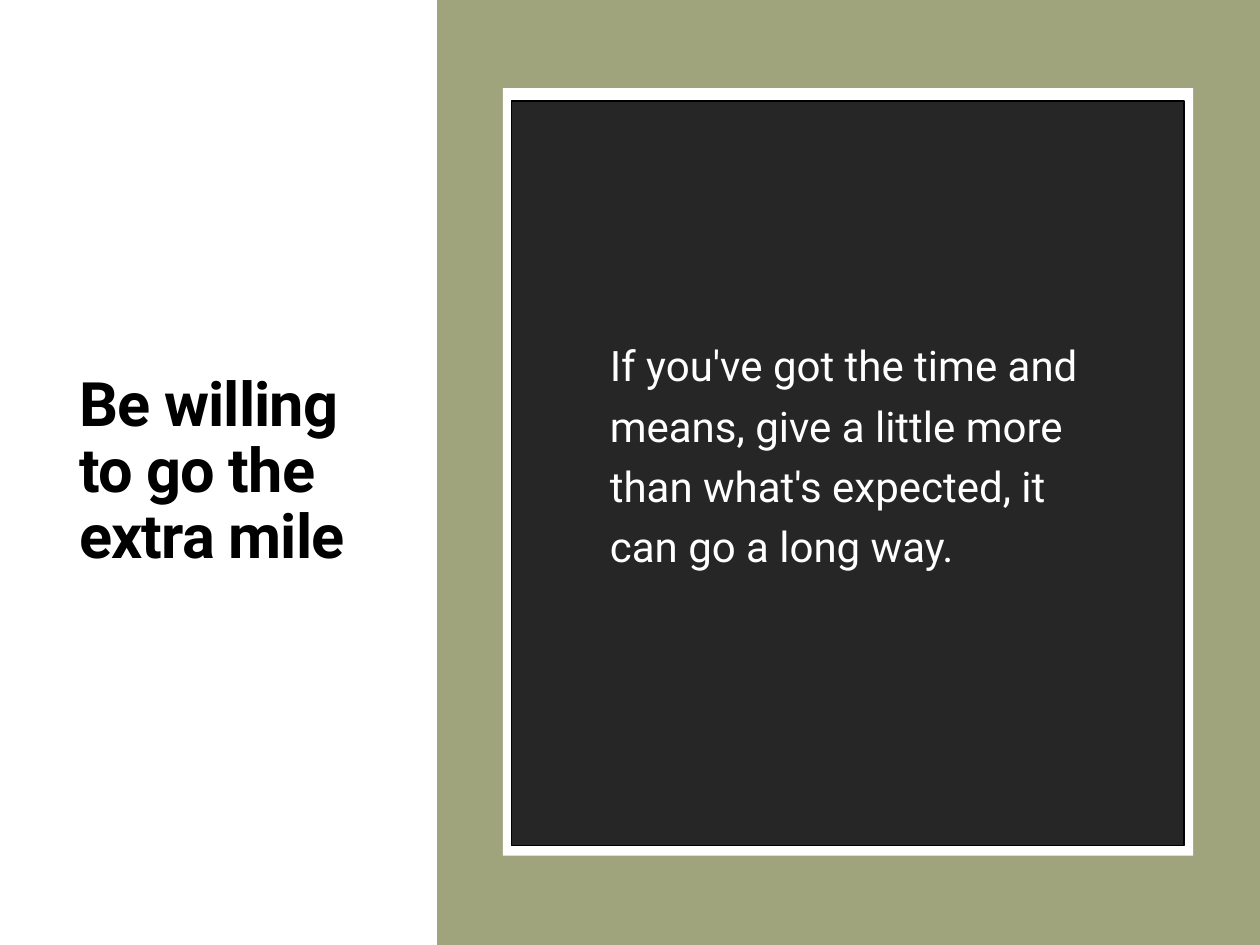
from pptx import Presentation
from pptx.dml.color import RGBColor
from pptx.enum import shapes, text
from pptx.oxml import parse_xml
from pptx.oxml.ns import nsdecls
from pptx.util import Inches, Pt


def rgb(value):
    """Turn a hex string into a colour."""
    return RGBColor.from_string(value)


def add_panel(slide, left, top, width, height, fill, outline=None):
    """Add a flat rectangle, outlined only when a colour is given."""
    panel = slide.shapes.add_shape(
        shapes.MSO_SHAPE.RECTANGLE,
        Inches(left), Inches(top), Inches(width), Inches(height))
    panel.shadow.inherit = False
    panel.fill.solid()
    panel.fill.fore_color.rgb = rgb(fill)
    if outline:
        panel.line.color.rgb = rgb(outline)
        panel.line.width = Pt(1)
    else:
        panel.line.fill.background()


def fill_placeholder(slide, holder, box, wording, size, color, spacing):
    """Place a placeholder above the panels and write its single paragraph."""
    slide.shapes._spTree.append(holder._element)
    holder.left, holder.top, holder.width, holder.height = map(Inches, box)
    frame = holder.text_frame
    frame.word_wrap = True
    frame.auto_size = text.MSO_AUTO_SIZE.NONE
    frame.vertical_anchor = text.MSO_ANCHOR.MIDDLE
    paragraph = frame.paragraphs[0]
    paragraph.alignment = text.PP_ALIGN.LEFT
    paragraph.line_spacing = spacing
    paragraph.space_before = Pt(0)
    run = paragraph.add_run()
    run.text = wording
    run.font.name = "Roboto"
    run.font.size = Pt(size)
    run.font.color.rgb = rgb(color)
    return paragraph, run


def add_heading(slide):
    """Write the bold, slightly tightened heading on the left."""
    _, run = fill_placeholder(
        slide, slide.shapes.title, (0.53, 1.28, 2.68, 4.94),
        "Be willing to go the extra mile", 35, "000000", 0.9)
    run.font.bold = True
    run._r.get_or_add_rPr().set("spc", "-50")


def add_advice(slide):
    """Write the advice on the dark panel, indented and without a bullet."""
    advice = slide.placeholders[1]
    paragraph, _ = fill_placeholder(
        slide, advice, (4.59, 1.49, 4.28, 4.51),
        "If you've got the time and means, give a little more "
        "than what's expected, it can go a long way.", 24, "FFFFFF", 1.2)
    advice.text_frame.margin_bottom = Inches(0.39)
    properties = paragraph._p.get_or_add_pPr()
    properties.set("marL", str(Inches(0.15)))
    properties.set("indent", "0")
    properties.append(parse_xml(f"<a:buNone {nsdecls('a')}/>"))


def main():
    """Build and save the slide."""
    deck = Presentation()
    deck.slide_width, deck.slide_height = Inches(10), Inches(7.5)
    slide = deck.slides.add_slide(deck.slide_layouts[1])
    add_panel(slide, 0, 0, 10, 7.5, "FFFFFF")
    add_panel(slide, 3.47, 0, 6.53, 7.5, "9FA47C")
    add_panel(slide, 3.99, 0.7, 5.48, 6.09, "FFFFFF")
    add_panel(slide, 4.06, 0.8, 5.34, 5.91, "262626", "000000")
    add_heading(slide)
    add_advice(slide)
    deck.save("out.pptx")


if __name__ == "__main__":
    main()
